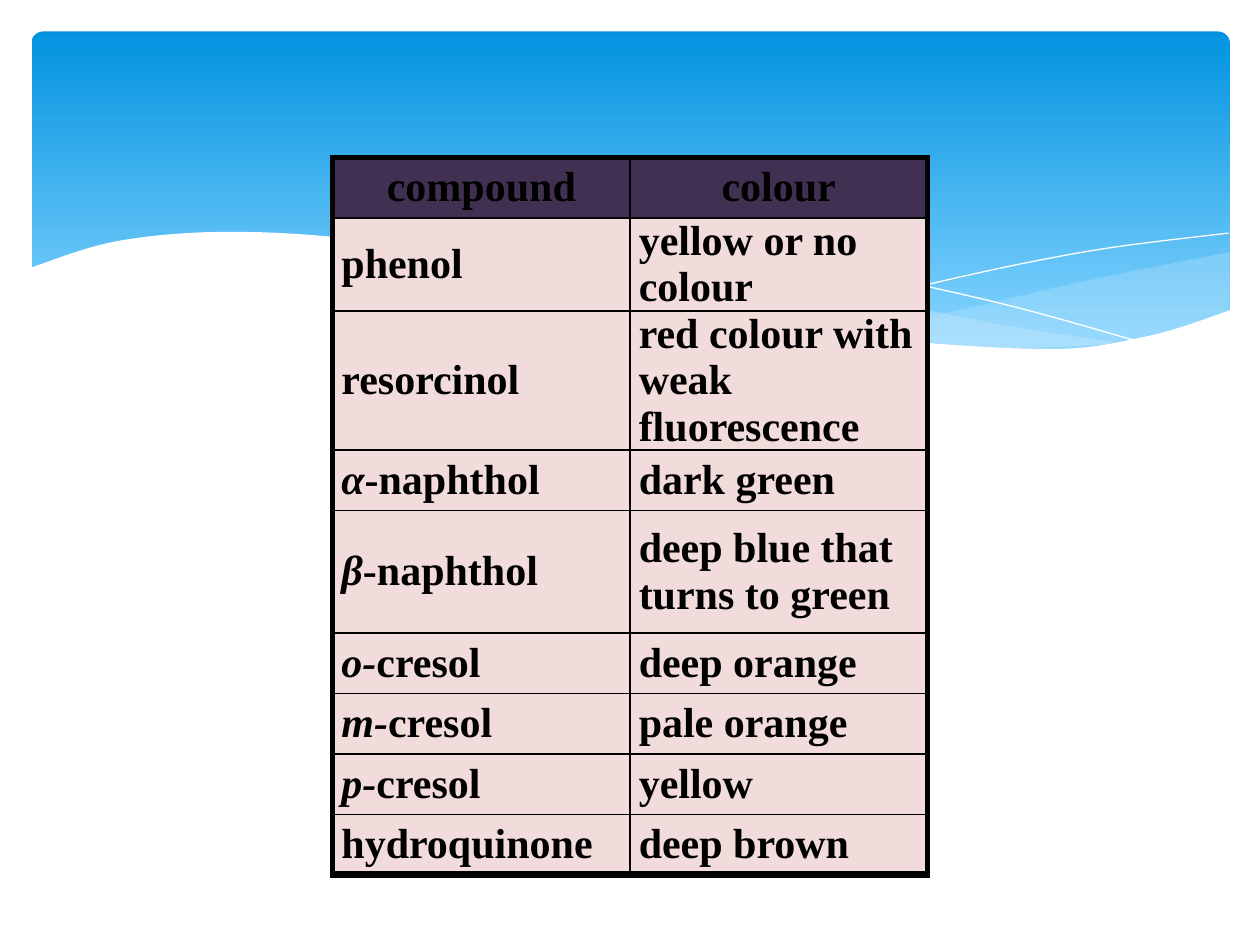
from lxml import etree
from pptx import Presentation
from pptx.dml.color import RGBColor
from pptx.enum.shapes import MSO_SHAPE
from pptx.enum.text import MSO_ANCHOR, PP_ALIGN
from pptx.oxml.ns import qn
from pptx.util import Inches, Pt

ROUNDED = MSO_SHAPE.ROUNDED_RECTANGLE
MIDDLE = MSO_ANCHOR.MIDDLE
CENTER, LEFT = PP_ALIGN.CENTER, PP_ALIGN.LEFT
STEPS = 8

COLORS = {
    "sky_top": "0293E0", "sky_bottom": "83D3FE", "mist": "C6E7FC",
    "white": "FFFFFF", "black": "000000", "header": "403152", "body": "F2DBDB",
}


def color(name):
    return RGBColor.from_string(COLORS[name])


def smooth(anchors):
    """Sample a Catmull-Rom curve through the anchors, given in inches."""
    padded = [anchors[0], *anchors, anchors[-1]]
    points = [anchors[0]]
    for before, start, end, after in zip(padded, padded[1:], padded[2:], padded[3:]):
        for step in range(1, STEPS + 1):
            t = step / STEPS
            points.append([
                b + ((c - a) * t + (2 * a - 5 * b + 4 * c - d) * t**2
                     + (3 * b - a - 3 * c + d) * t**3) / 2
                for a, b, c, d in zip(before, start, end, after)])
    return [(Inches(x), Inches(y)) for x, y in points]


deck = Presentation()
deck.slide_width, deck.slide_height = Inches(10), Inches(7.5)
page = deck.slides.add_slide(deck.slide_layouts[6])

# Sky panel
sky = page.shapes.add_shape(ROUNDED, Inches(0.25), Inches(0.25), Inches(9.51), Inches(2.7))
sky.shadow.inherit = False
sky.adjustments[0] = 0.034
sky.line.fill.background()
sky.fill.gradient()
sky.fill.gradient_angle = 270
for stop, position, name in zip(sky.fill.gradient_stops, (0, 0.9), ("sky_top", "sky_bottom")):
    stop.position = position
    stop.color.rgb = color(name)

# Waves: fill, opacity in percent (None for an open line), curves joined end to end
waves = [
    ("mist", 29, [[(9.76, 2), (8.61, 2.23), (7.53, 2.48), (6.61, 2.65)],
                  [(6.61, 2.65), (7.45, 2.75), (8.35, 2.77), (9.13, 2.67), (9.76, 2.47)]]),
    ("mist", 40, [[(8.93, 2.73), (7.75, 2.54), (6.29, 2.22), (5.14, 1.98), (3.99, 1.86), (2.86, 1.91)],
                  [(2.86, 1.91), (4.49, 2.22), (6.01, 2.55), (7.48, 2.76), (8.93, 2.73)]]),
    ("white", None, [[(3.09, 1.95), (4.33, 1.87), (5.56, 1.97), (6.65, 2.13), (7.95, 2.41), (9.07, 2.72)]]),
    ("white", None, [[(6.13, 2.57), (7.48, 2.23), (8.66, 1.99), (9.75, 1.85)]]),
    ("white", 100, [[(9.77, 2.46), (9.1, 2.67), (8.23, 2.77), (6.48, 2.62), (4.47, 2.2),
                     (3.16, 1.94), (1.93, 1.84), (0.95, 1.91), (0.23, 2.13)],
                    [(0.23, 3.29), (9.77, 3.29)]]),
]
for name, opacity, curves in waves:
    corners = [corner for curve in curves for corner in smooth(curve)]
    builder = page.shapes.build_freeform(*corners[0])
    builder.add_line_segments(corners[1:], close=opacity is not None)
    wave = builder.convert_to_shape()
    wave.shadow.inherit = False
    if opacity is None:
        wave.fill.background()
        wave.line.color.rgb = color(name)
        wave.line.width = Pt(0)
        continue
    wave.line.fill.background()
    wave.fill.solid()
    wave.fill.fore_color.rgb = color(name)
    if opacity < 100:
        tint = wave._element.spPr.find(qn("a:solidFill")).find(qn("a:srgbClr"))
        etree.SubElement(tint, qn("a:alpha"), val=str(opacity * 1000))

# Table: italic prefix, compound, colour
rows = [
    ("", "compound", "colour"),
    ("", "phenol", "yellow or no colour"),
    ("", "resorcinol", "red colour with weak fluorescence"),
    ("α", "-naphthol", "dark green"),
    ("β", "-naphthol", "deep blue that turns to green"),
    ("o-", "cresol", "deep orange"),
    ("m-", "cresol", "pale orange"),
    ("p-", "cresol", "yellow"),
    ("", "hydroquinone", "deep brown"),
]
last = len(rows) - 1
heights = [Inches(0.97 if len(hue) > 20 else 0.48) for _, _, hue in rows]
table = page.shapes.add_table(len(rows), 2, Inches(2.64), Inches(1.25),
                              Inches(4.72), sum(heights)).table

for r, (prefix, compound, hue) in enumerate(rows):
    table.rows[r].height = heights[r]
    for c, spans in enumerate([[(prefix, True), (compound, False)], [(hue, False)]]):
        cell = table.cell(r, c)
        cell.vertical_anchor = MIDDLE
        cell.margin_left = cell.margin_right = Inches(0.07)
        cell.margin_top = cell.margin_bottom = 0
        cell.fill.solid()
        cell.fill.fore_color.rgb = color("body" if r else "header")
        para = cell.text_frame.paragraphs[0]
        para.alignment = LEFT if r else CENTER
        for text, italic in spans:
            if not text:
                continue
            span = para.add_run()
            span.text = text
            span.font.name = "Times New Roman"
            span.font.size = Pt(24)
            span.font.bold = True
            span.font.italic = italic
            span.font.color.rgb = color("black")
        # Thick outer frame, thin inner rules
        widths = {"L": 1 if c else 3, "R": 3 if c else 1,
                  "T": 1 if r else 3, "B": 4.5 if r == last else 1}
        for position, (side, points) in enumerate(widths.items()):
            border = etree.Element(qn(f"a:ln{side}"), w=str(Pt(points)))
            ink = etree.SubElement(border, qn("a:solidFill"))
            etree.SubElement(ink, qn("a:srgbClr"), val=COLORS["black"])
            cell._tc.get_or_add_tcPr().insert(position, border)

deck.save("out.pptx")
